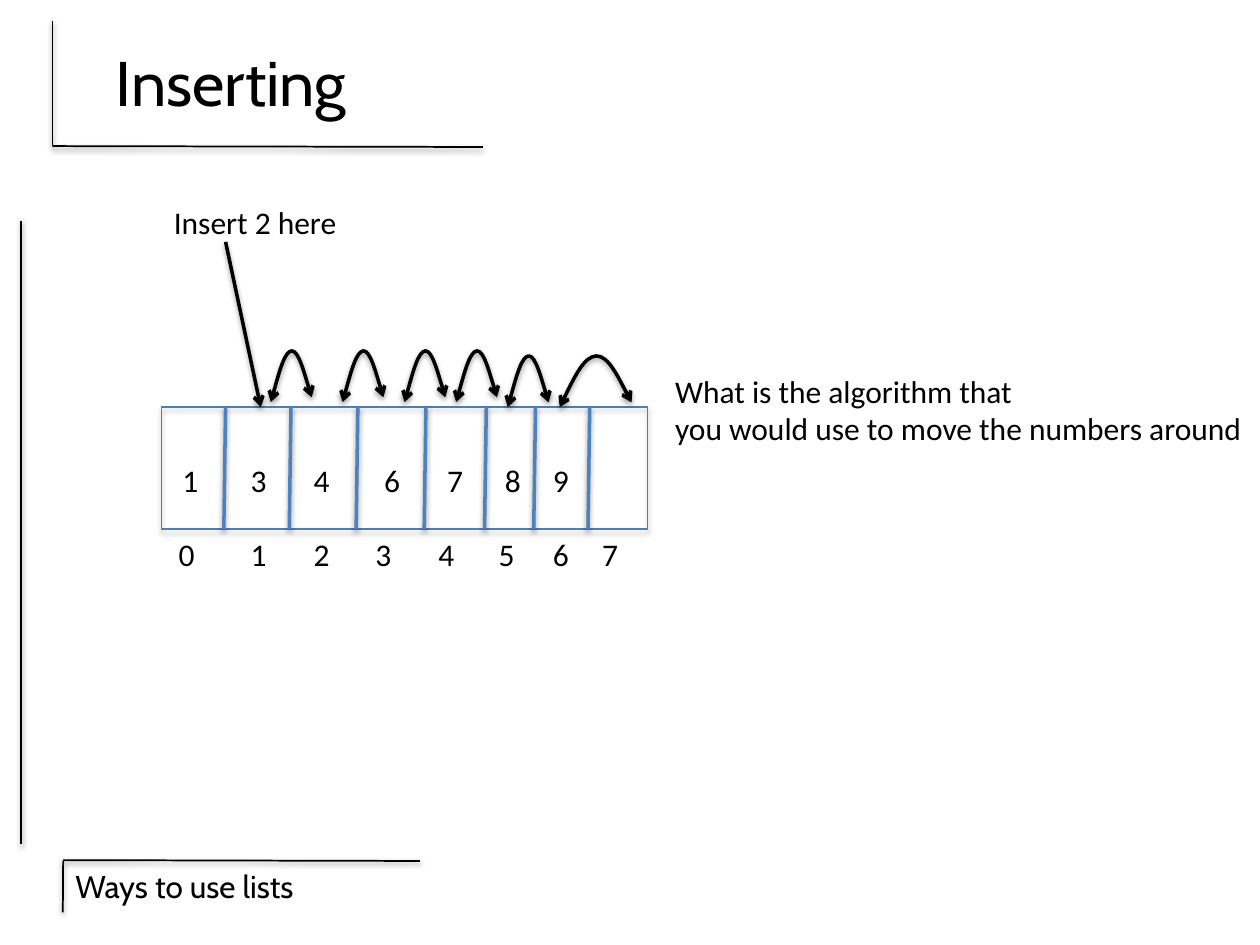
from dataclasses import dataclass
from typing import NamedTuple

import pptx
import pptx.dml.color
import pptx.enum.shapes
import pptx.enum.text
import pptx.oxml
import pptx.oxml.ns
import pptx.util

Pt = pptx.util.Pt
RGB = pptx.dml.color.RGBColor
qn = pptx.oxml.ns.qn
NS = pptx.oxml.ns.nsdecls("a")


@dataclass(frozen=True)
class Theme:
    ink: RGB = RGB(0x00, 0x00, 0x00)
    divider: RGB = RGB(0x4F, 0x81, 0xBD)
    outline: RGB = RGB(0x4B, 0x7E, 0xBC)
    heading_font: str = "Cabin"
    body_font: str = "Calibri"
    title_size: float = 36
    body_size: float = 18
    rule_width: float = 1
    arrow_width: float = 2
    outline_width: float = 0.75


class Line(NamedTuple):
    x1: float
    y1: float
    x2: float
    y2: float
    color: RGB
    width: float
    arrow: bool = False


class Label(NamedTuple):
    text: str
    x: float
    y: float
    w: float
    h: float = 28.8
    font: str = "Calibri"
    wrap: bool = False


class Hop(NamedTuple):
    """A curved arrow from one cell to the next; y is its lower left end."""
    x: float
    y: float
    w: float = 23.3


THEME = Theme()

BOX_X, BOX_Y, BOX_W, BOX_H = 92.2, 232.6, 277.9, 69.8
BOX_BOTTOM = BOX_Y + BOX_H
DIVIDER_XS = (128.9, 166.3, 204.5, 243.4, 277.9, 306, 337)
DIVIDER_SLANT = 1
INDEX_XS = (95, 136.1, 172.1, 207.4, 243.4, 277.9, 308.9, 337)
VALUE_XS = (97.2, 136.1, 172.1, 212.4, 248.4, 281.5, 308.9)
VALUES = (1, 3, 4, 6, 7, 8, 9)
VALUE_Y = 259.9
DIGIT_W = 23.8

FRAME_LINES = [
    Line(*ends, THEME.ink, THEME.rule_width)
    for ends in (
        (240, 492, 36, 491.5),
        (12.2, 126, 12.2, 482.4),
        (36.1, 492, 35.9, 521.3),
        (276, 84, 30, 83.5),
        (30, 12, 30, 83),
    )
]
DIVIDERS = [
    Line(x, BOX_Y, x - DIVIDER_SLANT, BOX_BOTTOM, THEME.divider, THEME.arrow_width)
    for x in DIVIDER_XS
]
INSERT_ARROW = Line(128.9, 138.2, 149, BOX_Y, THEME.ink, THEME.arrow_width, True)

FOOTER = Label("Ways to use lists", 36, 491.8, 174, font=THEME.heading_font, wrap=True)
LABELS = [
    *(Label(str(i), x, BOX_BOTTOM, DIGIT_W) for i, x in enumerate(INDEX_XS)),
    *(Label(str(v), x, VALUE_Y, DIGIT_W) for v, x in zip(VALUES, VALUE_XS)),
    Label("Insert 2 here", 92.2, 112.3, 108.7),
    Label("What is the algorithm that\nyou would use to move the numbers around",
          378.7, 208.8, 341.3, 51.1),
]
HOPS = [
    Hop(319.9, BOX_Y, 41),
    Hop(290.2, BOX_Y),
    *(Hop(x, 229.7) for x in (195.8, 231.2, 260.7, 154.8)),
]
# Two cubic curves: share of the hop's width, rise in points
HOP_CURVE = ((0.17, 14.4), (0.34, 28.8), (0.51, 29.2),
             (0.68, 29.5), (1, 2.7), (1, 2.7))


def add_shadow(sp, alpha: int = 38, dist: float = 1.6) -> None:
    sp._element.spPr.append(pptx.oxml.parse_xml(
        f'<a:effectLst {NS}><a:outerShdw blurRad="{Pt(3.1)}" dist="{Pt(dist)}" '
        f'dir="5400000" rotWithShape="0"><a:srgbClr val="{THEME.ink}">'
        f'<a:alpha val="{alpha * 1000}"/></a:srgbClr></a:outerShdw></a:effectLst>'))


def style_line(sp, color: RGB, width: float, ends: tuple[str, ...] = ()) -> None:
    sp.line.color.rgb = color
    sp.line.width = Pt(width)
    ln = sp._element.spPr.find(qn("a:ln"))
    for end in ends:
        ln.append(pptx.oxml.parse_xml(f'<a:{end} {NS} type="arrow"/>'))


def style_text(tf, font: str, size: float) -> None:
    for p in tf.paragraphs:
        for r in p.runs:
            r.font.name = font
            r.font.size = Pt(size)
            r.font.color.rgb = THEME.ink


def draw_line(shapes, line: Line) -> None:
    sp = shapes.add_connector(pptx.enum.shapes.MSO_CONNECTOR.STRAIGHT,
                              Pt(line.x1), Pt(line.y1), Pt(line.x2), Pt(line.y2))
    style_line(sp, line.color, line.width, ("tailEnd",) if line.arrow else ())
    add_shadow(sp)


def draw_label(shapes, label: Label) -> None:
    sp = shapes.add_textbox(Pt(label.x), Pt(label.y), Pt(label.w), Pt(label.h))
    tf = sp.text_frame
    tf.text = label.text
    tf.word_wrap = label.wrap
    tf.auto_size = pptx.enum.text.MSO_AUTO_SIZE.SHAPE_TO_FIT_TEXT
    style_text(tf, label.font, THEME.body_size)


def draw_hop(shapes, hop: Hop) -> None:
    points = [(Pt(hop.x + share * hop.w), Pt(hop.y - rise)) for share, rise in HOP_CURVE]
    builder = shapes.build_freeform(Pt(hop.x), Pt(hop.y))
    builder.add_line_segments(points, close=False)
    sp = builder.convert_to_shape()
    curve_through_controls(sp)
    sp.fill.background()
    style_line(sp, THEME.ink, THEME.arrow_width, ("headEnd", "tailEnd"))
    add_shadow(sp)


def curve_through_controls(sp) -> None:
    """Turn each three straight segments into one cubic curve."""
    outline = next(sp._element.iter(qn("a:path")))
    segments = outline.findall(qn("a:lnTo"))
    for i in range(0, len(segments), 3):
        curve = pptx.oxml.parse_xml(f"<a:cubicBezTo {NS}/>")
        for segment in segments[i:i + 3]:
            curve.append(segment[0])
            outline.remove(segment)
        outline.append(curve)


def draw_title(title) -> None:
    title.left, title.top, title.width, title.height = Pt(36), Pt(12), Pt(192), Pt(68.4)
    tf = title.text_frame
    tf.text = "Inserting"
    tf.vertical_anchor = pptx.enum.text.MSO_ANCHOR.MIDDLE
    tf.paragraphs[0].alignment = pptx.enum.text.PP_ALIGN.CENTER
    style_text(tf, THEME.heading_font, THEME.title_size)


def draw_list_box(shapes) -> None:
    sp = shapes.add_shape(pptx.enum.shapes.MSO_SHAPE.RECTANGLE,
                          Pt(BOX_X), Pt(BOX_Y), Pt(BOX_W), Pt(BOX_H))
    sp.fill.background()
    style_line(sp, THEME.outline, THEME.outline_width)
    add_shadow(sp, alpha=35, dist=1.8)


def main() -> None:
    prs = pptx.Presentation()
    prs.slide_width, prs.slide_height = Pt(720), Pt(540)
    shapes = prs.slides.add_slide(prs.slide_layouts[5]).shapes
    draw_title(shapes.title)
    for line in FRAME_LINES:
        draw_line(shapes, line)
    draw_label(shapes, FOOTER)
    draw_list_box(shapes)
    for line in (*DIVIDERS, INSERT_ARROW):
        draw_line(shapes, line)
    for label in LABELS:
        draw_label(shapes, label)
    for hop in HOPS:
        draw_hop(shapes, hop)
    prs.save("out.pptx")


if __name__ == "__main__":
    main()
